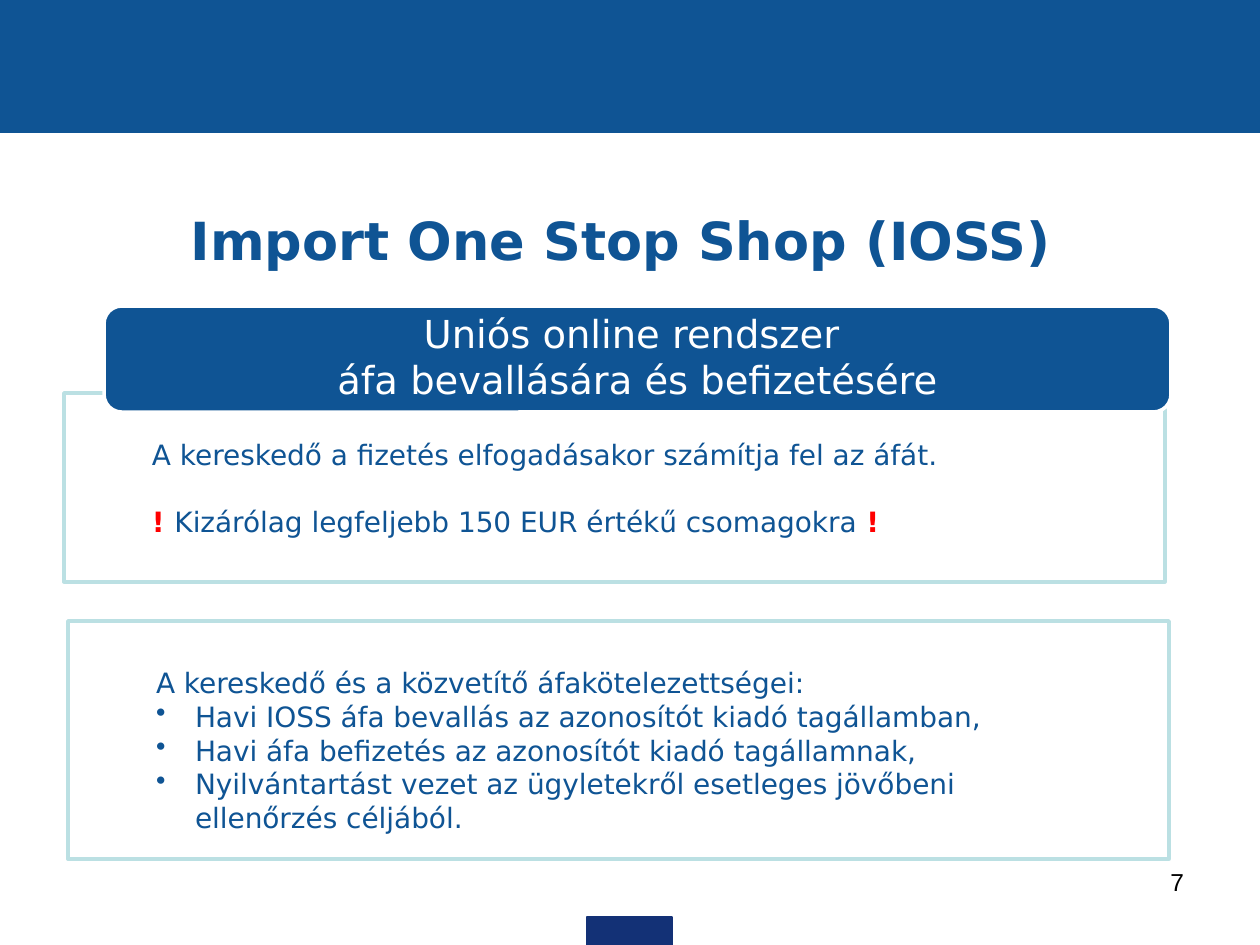
"""Build the slide on the Import One Stop Shop."""
import pptx
import pptx.dml.color
import pptx.enum.shapes
import pptx.enum.text
import pptx.util
import lxml.etree

PX = 914400 / 126
FORMS = pptx.enum.shapes.MSO_SHAPE
ALIGN = pptx.enum.text.PP_ALIGN
ANCHOR = pptx.enum.text.MSO_ANCHOR
BLUE, WHITE, AQUA, RED = "0F5494", "FFFFFF", "BBE0E3", "FF0000"
PT = pptx.util.Pt
SANS = "DejaVu Sans"


def paint(target, color):
    if hasattr(target, "solid"):
        target.solid()
        target = target.fore_color
    target.rgb = pptx.dml.color.RGBColor.from_string(color)


def write(frame, lines, form, color, inset, align, anchor):
    frame.word_wrap = True
    frame.vertical_anchor = anchor
    sides = ("margin_left", "margin_top", "margin_right", "margin_bottom")
    for side, size in zip(sides, inset):
        setattr(frame, side, round(size * PX))
    for i, (runs, gap, mark) in enumerate(lines):
        para = frame.paragraphs[0] if i == 0 else frame.add_paragraph()
        para.alignment = align
        if gap:
            para.space_before = PT(gap)
        if mark:
            props = para._p.get_or_add_pPr()
            props.set("marL", str(round(39 * PX)))
            props.set("indent", str(round(-39 * PX)))
            tag = pptx.oxml.ns.qn("a:buChar")
            lxml.etree.SubElement(props, tag).set("char", "•")
        for words, tint in runs:
            run = para.add_run()
            run.text = words
            for key, value in form.items():
                setattr(run.font, key, value)
            if tint:
                run.font.bold = True
            paint(run.font.color, tint or color)


deck = pptx.Presentation()
deck.slide_width = round(1260 * PX)
deck.slide_height = round(945 * PX)
slide = deck.slides.add_slide(deck.slide_layouts[6])

body = {"name": SANS, "size": PT(16)}
pad = (88, 45, 88, 15)
left, center, right = ALIGN.LEFT, ALIGN.CENTER, ALIGN.RIGHT
top, middle = ANCHOR.TOP, ANCHOR.MIDDLE

rules = [
    ([("A kereskedő a fizetés elfogadásakor számítja fel az áfát.", None)], 0, False),
    ([("! ", RED), ("Kizárólag legfeljebb 150 EUR értékű csomagokra ", None),
      ("!", RED)], 19, False),
]
duties = [([("A kereskedő és a közvetítő áfakötelezettségei:", None)], 0, False)]
for duty in (
    "Havi IOSS áfa bevallás az azonosítót kiadó tagállamban,",
    "Havi áfa befizetés az azonosítót kiadó tagállamnak,",
    "Nyilvántartást vezet az ügyletekről esetleges jövőbeni ellenőrzés céljából.",
):
    duties.append(([(duty, None)], 0, True))
system = [
    ([("Uniós online rendszer ", None)], 0, False),
    ([("áfa bevallására és befizetésére", None)], 0, False),
]

shapes = [
    (FORMS.RECTANGLE, (0, 0, 1260, 132), BLUE, BLUE, 0.75, None),
    (FORMS.RECTANGLE, (587, 917, 85, 28), "133176", "133176", 0.75, None),
    (FORMS.RECTANGLE, (64, 393, 1101, 189), WHITE, AQUA, 2,
     (rules, body, BLUE, pad, left, top)),
    (FORMS.ROUNDED_RECTANGLE, (104, 306, 1067, 106), BLUE, WHITE, 2,
     (system, {"name": SANS, "size": PT(22)}, WHITE, (30, 0, 30, 6), center, middle)),
    (FORMS.RECTANGLE, (68, 621, 1101, 238), WHITE, AQUA, 2,
     (duties, body, BLUE, pad, left, top)),
]
for kind, place, fill, edge, width, text in shapes:
    shape = slide.shapes.add_shape(kind, *(round(n * PX) for n in place))
    shape.shadow.inherit = False
    paint(shape.fill, fill)
    paint(shape.line.fill, edge)
    shape.line.width = PT(width)
    if text:
        write(shape.text_frame, *text)

labels = [
    ((54, 185, 1134, 110), "Import One Stop Shop (IOSS)",
     {"name": SANS, "size": PT(30), "bold": True}, BLUE, center, middle),
    ((903, 861, 294, 65), "7",
     {"name": "Arial", "size": PT(14)}, "000000", right, top),
]
for place, words, form, color, align, anchor in labels:
    box = slide.shapes.add_textbox(*(round(n * PX) for n in place))
    write(box.text_frame, [([(words, None)], 0, False)], form, color,
          (13, 6, 13, 6), align, anchor)

deck.save("out.pptx")
